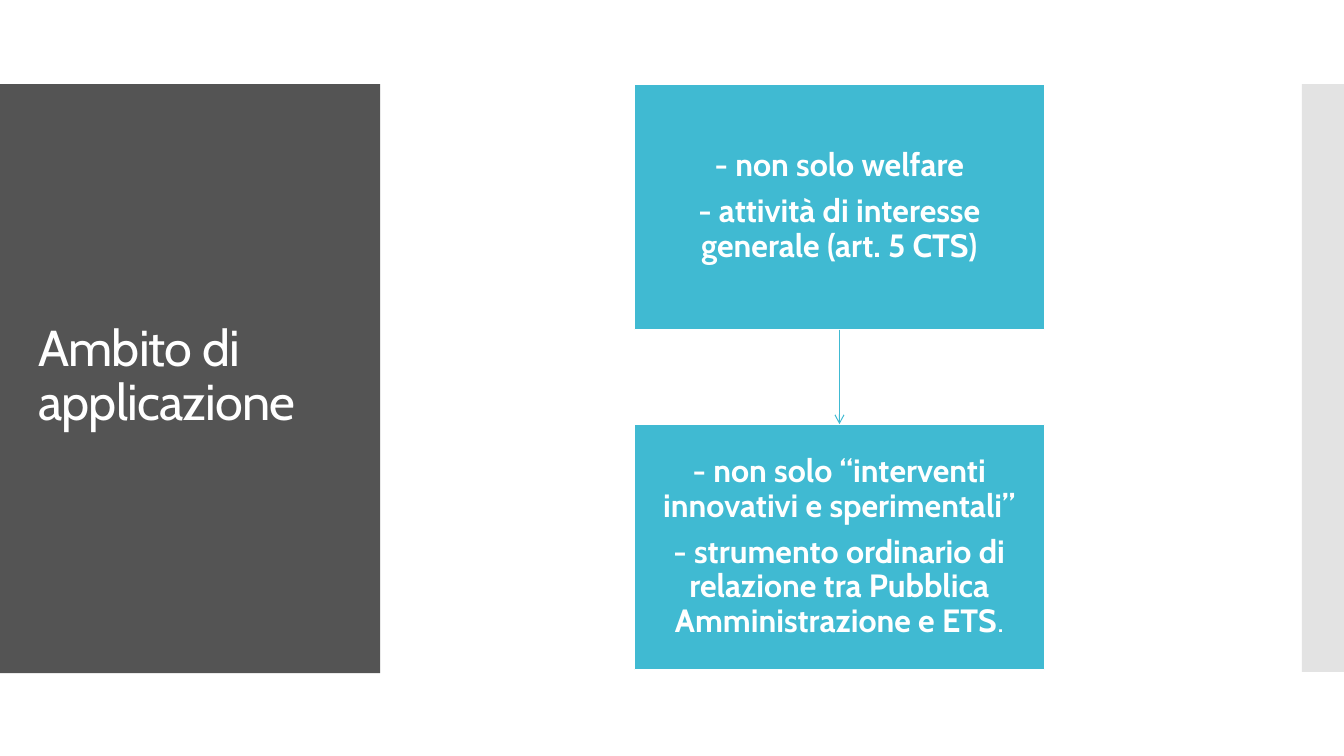
import pptx
import pptx.util
import pptx.dml.color
import pptx.enum.shapes
import pptx.enum.text
import pptx.oxml
import pptx.oxml.ns

PX = 9525
COLOURS = {"dark": "545454", "accent": "40BAD2", "grey": "C8C8C8", "white": "FFFFFF"}
FONT = "Cabin"
BOX_LEFT, BOX_TOP, BOX_WIDTH, BOX_HEIGHT, BOX_GAP = 604, 80, 391, 234, 90
BOX_TEXTS = [
    [["- non solo welfare"], ["- attività di interesse generale (art. 5 CTS)"]],
    [
        ["- non solo “interventi innovativi e sperimentali”"],
        ["- strumento ordinario di relazione tra Pubblica Amministrazione e ETS", "."],
    ],
]


def colour(name):
    return pptx.dml.color.RGBColor.from_string(COLOURS[name])


def add_text(paragraph, text, size, bold=False, spacing=None):
    run = paragraph.add_run()
    run.text = text
    run.font.name = FONT
    run.font.size = pptx.util.Pt(size)
    run.font.bold = bold
    run.font.color.rgb = colour("white")
    if spacing is not None:
        run.font._element.set("spc", str(round(spacing * 100)))


class SlideBuilder:
    def __init__(self, presentation):
        self.slide = presentation.slides.add_slide(presentation.slide_layouts[5])

    def rectangle(self, left, top, width, height, fill, line=None, opacity=None):
        shape = self.slide.shapes.add_shape(
            pptx.enum.shapes.MSO_SHAPE.RECTANGLE,
            left * PX, top * PX, width * PX, height * PX,
        )
        shape.shadow.inherit = False
        shape.fill.solid()
        shape.fill.fore_color.rgb = colour(fill)
        if opacity is not None:
            srgb = shape._element.spPr.find(".//" + pptx.oxml.ns.qn("a:srgbClr"))
            alpha = pptx.oxml.parse_xml(
                f'<a:alpha {pptx.oxml.ns.nsdecls("a")} val="{opacity * 1000}"/>'
            )
            srgb.append(alpha)
        if line:
            shape.line.color.rgb = colour(line)
            shape.line.width = pptx.util.Pt(0.85)
        else:
            shape.line.fill.background()
        return shape

    def title(self, text, left, top, width, height):
        title = self.slide.shapes.title
        title.left, title.top = left * PX, top * PX
        title.width, title.height = width * PX, height * PX
        title.element.getparent().append(title.element)
        frame = title.text_frame
        frame.word_wrap = True
        frame.vertical_anchor = pptx.enum.text.MSO_ANCHOR.MIDDLE
        paragraph = frame.paragraphs[0]
        paragraph.alignment = pptx.enum.text.PP_ALIGN.LEFT
        paragraph.line_spacing = 0.9
        add_text(paragraph, text, size=36, spacing=-0.6)

    def text_box(self, paragraphs, left, top, width, height):
        shape = self.rectangle(left, top, width, height, "accent", line="white")
        frame = shape.text_frame
        frame.word_wrap = True
        frame.vertical_anchor = pptx.enum.text.MSO_ANCHOR.MIDDLE
        frame.margin_left = frame.margin_right = 19 * PX
        frame.margin_top = frame.margin_bottom = 20 * PX
        for index, parts in enumerate(paragraphs):
            paragraph = frame.add_paragraph() if index else frame.paragraphs[0]
            paragraph.alignment = pptx.enum.text.PP_ALIGN.CENTER
            paragraph.line_spacing = 0.9
            paragraph.space_after = pptx.util.Pt(8)
            for part in parts:
                add_text(paragraph, part, size=23, bold=part != ".")
        return shape

    def arrow(self, upper, lower):
        connector = self.slide.shapes.add_connector(
            pptx.enum.shapes.MSO_CONNECTOR.STRAIGHT, 0, 0, 0, 0
        )
        connector.begin_connect(upper, 2)
        connector.end_connect(lower, 0)
        connector.line.color.rgb = colour("accent")
        connector.line.width = pptx.util.Pt(0.75)
        namespace = pptx.oxml.ns.nsdecls("a")
        connector.line._get_or_add_ln().append(
            pptx.oxml.parse_xml(f'<a:tailEnd {namespace} type="arrow"/>')
        )
        connector._element.spPr.append(pptx.oxml.parse_xml(f"<a:effectLst {namespace}/>"))


def main():
    presentation = pptx.Presentation()
    presentation.slide_width = 1280 * PX
    presentation.slide_height = 720 * PX
    builder = SlideBuilder(presentation)
    builder.rectangle(1240, 80, 40, 560, "grey", opacity=50)
    builder.rectangle(0, 80, 362, 561, "dark")
    builder.title("Ambito di applicazione", 27, 118, 309, 483)
    boxes = [
        builder.text_box(
            paragraphs, BOX_LEFT, BOX_TOP + index * (BOX_HEIGHT + BOX_GAP), BOX_WIDTH, BOX_HEIGHT
        )
        for index, paragraphs in enumerate(BOX_TEXTS)
    ]
    builder.arrow(*boxes)
    presentation.save("out.pptx")


if __name__ == "__main__":
    main()
